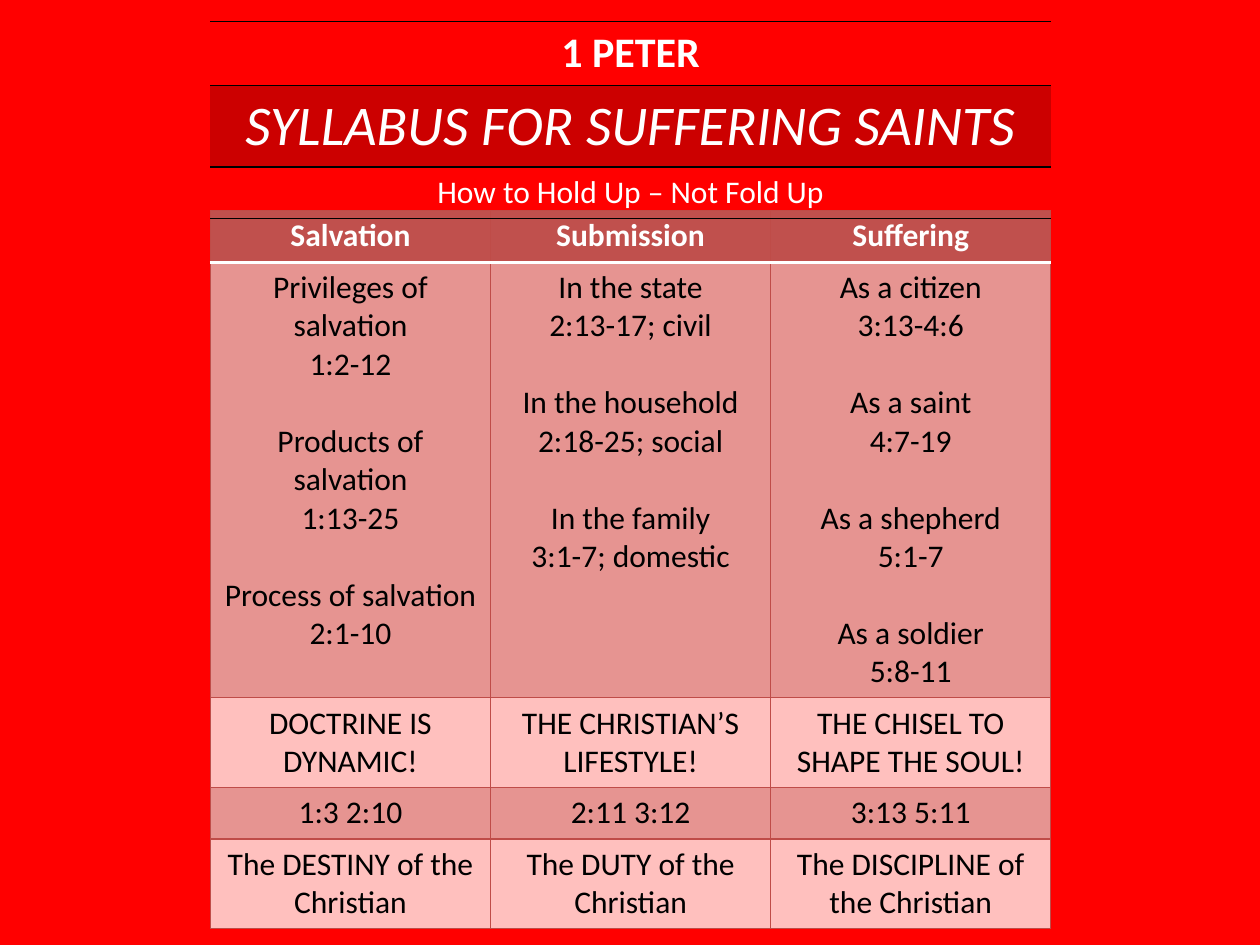
from lxml.etree import SubElement
from pptx import Presentation
from pptx.dml.color import RGBColor
from pptx.enum.text import PP_ALIGN as Align
from pptx.oxml.ns import qn
from pptx.util import Inches, Pt

NO_STYLE = "{2D5ABB26-0587-4C30-8999-92F81FD0307C}"
BLACK, WHITE, RED, ROSE = "000000", "FFFFFF", "FF0000", "BF4C48"
HEADER, DARK_BAND, LIGHT_BAND, TITLE_BAND = "C0504D", "E69491", "FFC0BE", "CC0000"

TITLES = [
    ("1 PETER", 0.51, None, {"size": Pt(24), "bold": True}, {"T": (BLACK, 1), "B": (BLACK, 1)}),
    ("SYLLABUS FOR SUFFERING SAINTS", 0.64, TITLE_BAND, {"size": Pt(32), "italic": True}, {"T": (BLACK, 1)}),
    ("How to Hold Up – Not Fold Up", 0.41, None, {"size": Pt(18)}, {"B": (BLACK, 1)}),
]

GRID = dict.fromkeys("LRTB", (ROSE, 0.75))
RULE = (WHITE, 2)
OUTLINE = [
    (0.41, HEADER, WHITE, GRID | {"B": RULE}, ["Salvation", "Submission", "Suffering"]),
    (3.45, DARK_BAND, BLACK, GRID | {"T": RULE}, [
        [("Privileges of salvation", "1:2-12"),
         ("Products of salvation", "1:13-25"),
         ("Process of salvation", "2:1-10")],
        [("In the state", "2:13-17; civil"),
         ("In the household", "2:18-25; social"),
         ("In the family", "3:1-7; domestic")],
        [("As a citizen", "3:13-4:6"),
         ("As a saint", "4:7-19"),
         ("As a shepherd", "5:1-7"),
         ("As a soldier", "5:8-11")],
    ]),
    (0.71, LIGHT_BAND, BLACK, GRID,
     ["DOCTRINE IS DYNAMIC!", "THE CHRISTIAN’S LIFESTYLE!", "THE CHISEL TO SHAPE THE SOUL!"]),
    (0.41, DARK_BAND, BLACK, GRID, ["1:3 2:10", "2:11 3:12", "3:13 5:11"]),
    (0.71, LIGHT_BAND, BLACK, GRID,
     ["The DESTINY of the Christian", "The DUTY of the Christian", "The DISCIPLINE of the Christian"]),
]


def color(value):
    """Turn a hex string into a colour."""
    return RGBColor.from_string(value)


class Builder:
    """Hold the text style and the slide being built."""

    def __init__(self, slide, font="Calibri"):
        """Keep the slide and its font."""
        self.slide = slide
        self.font = font

    def background(self, value):
        """Fill the slide background."""
        fill = self.slide.background.fill
        fill.solid()
        fill.fore_color.rgb = color(value)

    def table(self, left, top, width, heights, columns):
        """Add an unstyled table with equal columns."""
        frame = self.slide.shapes.add_table(
            len(heights), columns, Inches(left), Inches(top), Inches(width), Inches(sum(heights)))
        next(frame.element.iter(qn("a:tableStyleId"))).text = NO_STYLE
        table = frame.table
        table.first_row = table.horz_banding = False
        for row, height in zip(table.rows, heights):
            row.height = Inches(height)
        return table

    def box(self, cell, borders, fill):
        """Set the borders and the fill of a cell."""
        properties = cell._tc.get_or_add_tcPr()
        for side in "LRTB":
            if side in borders:
                value, points = borders[side]
                line = SubElement(properties, qn(f"a:ln{side}"), w=str(Pt(points)))
                solid = SubElement(line, qn("a:solidFill"))
                SubElement(solid, qn("a:srgbClr"), val=value)
        if fill:
            cell.fill.solid()
            cell.fill.fore_color.rgb = color(fill)
        else:
            cell.fill.background()

    def text(self, cell, groups, value, formats):
        """Write groups of centred lines with a gap between groups."""
        frame = cell.text_frame
        paragraph = None
        for number, group in enumerate(groups):
            for position, line in enumerate(group):
                paragraph = frame.add_paragraph() if paragraph else frame.paragraphs[0]
                paragraph.alignment = Align.CENTER
                if number and position == 0:
                    paragraph.space_before = Pt(22)
                run = paragraph.add_run()
                run.text = line
                run.font.color.rgb = color(value)
                for name, setting in ({"name": self.font, "bold": False} | formats).items():
                    setattr(run.font, name, setting)


def main():
    """Build the slide and save it."""
    presentation = Presentation()
    presentation.slide_width, presentation.slide_height = Inches(10), Inches(7.5)
    builder = Builder(presentation.slides.add_slide(presentation.slide_layouts[6]))
    builder.background(RED)

    outline = builder.table(1.67, 1.67, 6.67, [row[0] for row in OUTLINE], 3)
    for index, (_, fill, ink, borders, entries) in enumerate(OUTLINE):
        for column, entry in enumerate(entries):
            cell = outline.cell(index, column)
            builder.box(cell, borders, fill)
            groups = [(entry,)] if isinstance(entry, str) else entry
            builder.text(cell, groups, ink, {"size": Pt(18), "bold": index == 0})

    titles = builder.table(1.67, 0.17, 6.67, [row[1] for row in TITLES], 1)
    for index, (title, _, fill, formats, borders) in enumerate(TITLES):
        cell = titles.cell(index, 0)
        builder.box(cell, borders, fill)
        builder.text(cell, [(title,)], WHITE, formats)

    presentation.save("out.pptx")


if __name__ == "__main__":
    main()
